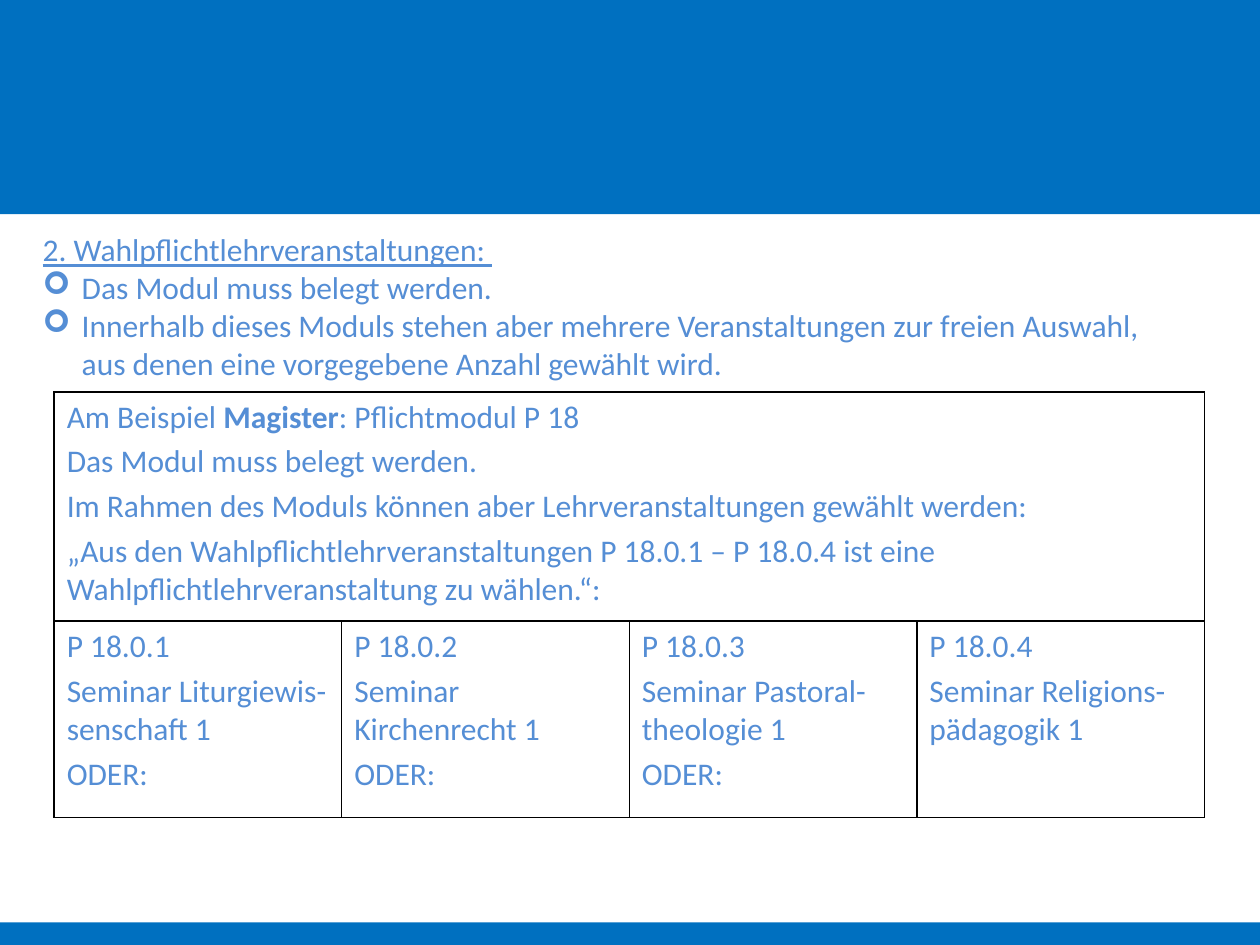
"""Build the slide on elective courses with an example module table."""
import lxml.etree
import pptx
import pptx.dml.color
import pptx.enum.shapes
import pptx.enum.text
import pptx.oxml.ns
import pptx.util

Inches, Pt = pptx.util.Inches, pptx.util.Pt
qn = pptx.oxml.ns.qn

COLORS = {"band": "0070C0", "text": "558ED5", "border": "000000"}
FONT, SIZE = "Calibri", 18
BANDS = [(0, 1.7), (7.32, 0.18)]
HEADING = "2. Wahlpflichtlehrveranstaltungen: "
BULLETS = [
    "Das Modul muss belegt werden.",
    "Innerhalb dieses Moduls stehen aber mehrere Veranstaltungen zur freien "
    "Auswahl, aus denen eine vorgegebene Anzahl gewählt wird.",
]
EXAMPLE = [
    [("Am Beispiel ", False), ("Magister", True), (": Pflichtmodul P 18", False)],
    [("Das Modul muss belegt werden.", False)],
    [("Im Rahmen des Moduls können aber Lehrveranstaltungen gewählt werden:", False)],
    [("„Aus den Wahlpflichtlehrveranstaltungen P 18.0.1 – P 18.0.4 ist eine "
      "Wahlpflichtlehrveranstaltung zu wählen.“:", False)],
]
COURSES = [
    ["P 18.0.1", "Seminar Liturgiewis-senschaft 1", "ODER:"],
    ["P 18.0.2", "Seminar Kirchenrecht 1", "ODER:"],
    ["P 18.0.3", "Seminar Pastoral-theologie 1", "ODER:"],
    ["P 18.0.4", "Seminar Religions-pädagogik 1"],
]
TABLE_LEFT, TABLE_TOP, TABLE_WIDTH = 0.43, 3.11, 9.13
ROW_HEIGHTS = [1.82, 1.56]


def rgb(name):
    return pptx.dml.color.RGBColor.from_string(COLORS[name])


def add_run(p, text, bold=False, underline=False):
    r = p.add_run()
    r.text = text
    r.font.name, r.font.size = FONT, Pt(SIZE)
    r.font.bold, r.font.underline = bold, underline
    r.font.color.rgb = rgb("text")


def add_bullet(p):
    pPr = p._p.get_or_add_pPr()
    pPr.set("marL", str(Inches(0.31)))
    pPr.set("indent", str(Inches(-0.31)))
    color = lxml.etree.SubElement(pPr, qn("a:buClr"))
    lxml.etree.SubElement(color, qn("a:srgbClr"), val=COLORS["text"])
    lxml.etree.SubElement(pPr, qn("a:buFont"), typeface="Wingdings")
    lxml.etree.SubElement(pPr, qn("a:buChar"), char="➢")


def fill_cell(cell, paragraphs):
    tf = cell.text_frame
    for i, runs in enumerate(paragraphs):
        p = tf.add_paragraph() if i else tf.paragraphs[0]
        if i:
            p.space_before = Pt(0.2 * SIZE)
        for text, bold in runs:
            add_run(p, text, bold)


def style_cell(cell):
    cell.fill.background()
    tcPr = cell._tc.get_or_add_tcPr()
    for i, side in enumerate(["a:lnL", "a:lnR", "a:lnT", "a:lnB"]):
        ln = lxml.etree.Element(qn(side), w=str(Pt(1)))
        fill = lxml.etree.SubElement(ln, qn("a:solidFill"))
        lxml.etree.SubElement(fill, qn("a:srgbClr"), val=COLORS["border"])
        tcPr.insert(i, ln)


def add_bands(slide):
    for top, height in BANDS:
        sp = slide.shapes.add_shape(
            pptx.enum.shapes.MSO_SHAPE.RECTANGLE,
            0, Inches(top), Inches(10), Inches(height))
        sp.shadow.inherit = False
        sp.fill.solid()
        sp.fill.fore_color.rgb = rgb("band")
        sp.line.fill.background()


def add_intro(slide):
    box = slide.shapes.add_textbox(Inches(0.24), Inches(1.78), Inches(8.98), Inches(1.31))
    tf = box.text_frame
    tf.word_wrap = True
    tf.auto_size = pptx.enum.text.MSO_AUTO_SIZE.SHAPE_TO_FIT_TEXT
    add_run(tf.paragraphs[0], HEADING, underline=True)
    for text in BULLETS:
        p = tf.add_paragraph()
        add_bullet(p)
        add_run(p, text)


def add_module_table(slide):
    table = slide.shapes.add_table(
        len(ROW_HEIGHTS), len(COURSES), Inches(TABLE_LEFT), Inches(TABLE_TOP),
        Inches(TABLE_WIDTH), Inches(sum(ROW_HEIGHTS))).table
    table.first_row = table.horz_banding = False
    for row, height in zip(table.rows, ROW_HEIGHTS):
        row.height = Inches(height)
        for cell in row.cells:
            style_cell(cell)
    table.cell(0, 0).merge(table.cell(0, len(COURSES) - 1))
    fill_cell(table.cell(0, 0), EXAMPLE)
    for col, lines in enumerate(COURSES):
        fill_cell(table.cell(1, col), [[(line, False)] for line in lines])


def main():
    prs = pptx.Presentation()
    prs.slide_width, prs.slide_height = Inches(10), Inches(7.5)
    slide = prs.slides.add_slide(prs.slide_layouts[6])
    add_bands(slide)
    add_intro(slide)
    add_module_table(slide)
    prs.save("out.pptx")


if __name__ == "__main__":
    main()
